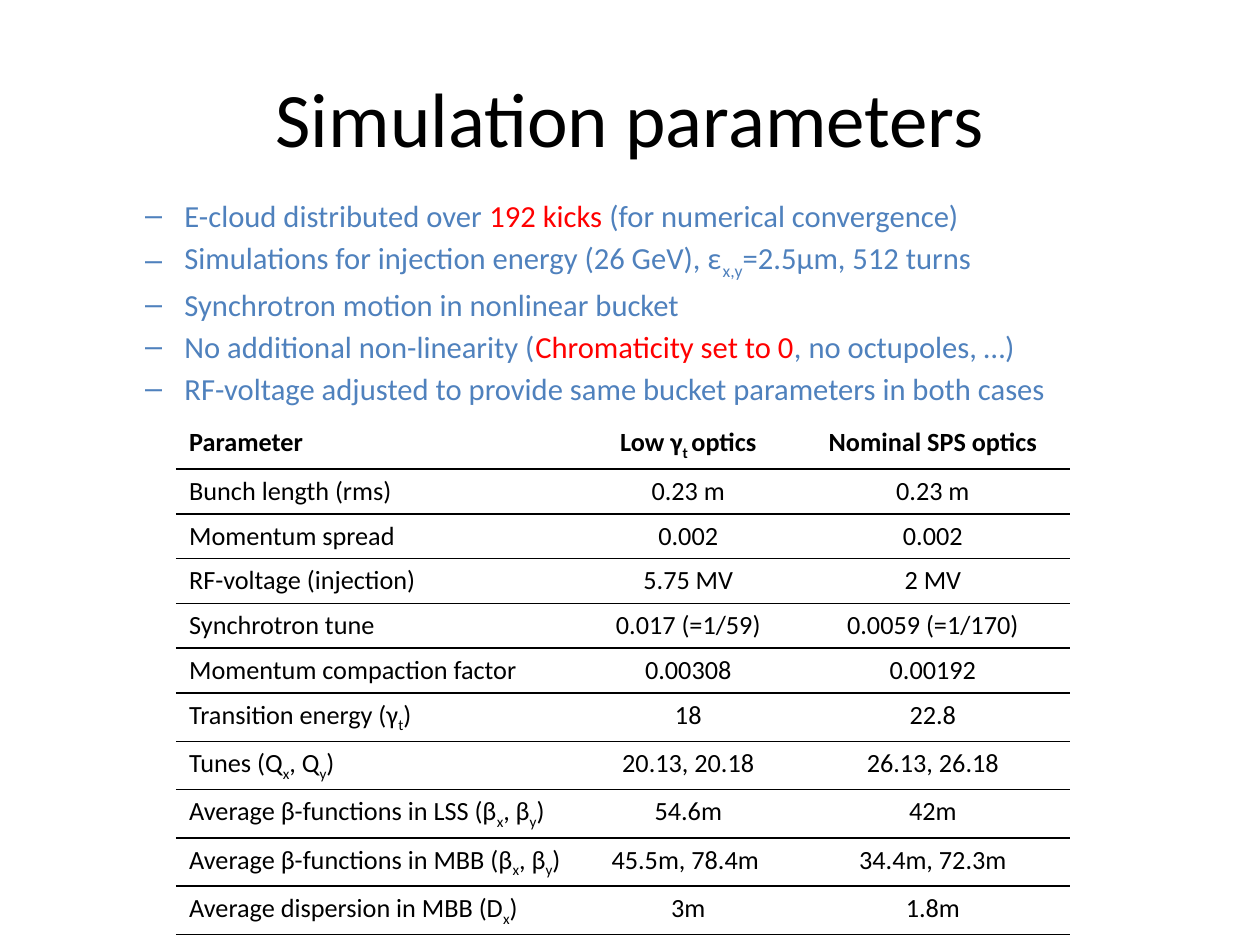
from lxml import etree
from pptx import Presentation
from pptx import util as u
from pptx.dml.color import RGBColor
from pptx.enum import text
from pptx.oxml.ns import qn

COLORS = {"ink": "000000", "paper": "FFFFFF", "blue": "4F81BD", "red": "FF0000"}
FONT = "Calibri"

# Pieces between bars are emphasised: red in RED_POINTS, subscript elsewhere.
POINTS = [
    "E-cloud distributed over |192 kicks |(for numerical convergence)",
    "Simulations for injection energy (26 GeV), ε|x,y|=2.5μm, 512 turns",
    "Synchrotron motion in nonlinear bucket",
    "No additional non-linearity (|Chromaticity set to 0|, no octupoles, …)",
    "RF-voltage adjusted to provide same bucket parameters in both cases",
]
RED_POINTS = {0, 3}

PARAMETERS = [
    ("Parameter", "Low γ|t |optics", "Nominal SPS optics"),
    ("Bunch length (rms)", "0.23 m", "0.23 m"),
    ("Momentum spread", "0.002", "0.002"),
    ("RF-voltage (injection)", "5.75 MV", "2 MV"),
    ("Synchrotron tune", "0.017 (=1/59)", "0.0059 (=1/170)"),
    ("Momentum compaction factor", "0.00308", "0.00192"),
    ("Transition energy (γ|t|)", "18", "22.8"),
    ("Tunes (Q|x|, Q|y|)", "20.13, 20.18", "26.13, 26.18"),
    ("Average β-functions in LSS (β|x|, β|y|)", "54.6m", "42m"),
    ("Average β-functions in MBB (β|x|, β|y|)", "45.5m, 78.4m ", "34.4m, 72.3m"),
    ("Average dispersion in MBB (D|x|)", "3m", "1.8m"),
]


class SlideBuilder:
    """Holds the style and the slide being built."""

    def __init__(self, prs):
        self.slide = prs.slides.add_slide(prs.slide_layouts[1])

    def place(self, shape, left, top, width, height):
        shape.left, shape.top = u.Cm(left), u.Cm(top)
        shape.width, shape.height = u.Cm(width), u.Cm(height)

    def add_words(self, paragraph, marked, size, color, bold=False, accent=None):
        """Add marked text; emphasis is the accent colour, or else a subscript."""
        for i, piece in enumerate(marked.split("|")):
            emphasised = i % 2 == 1
            run = paragraph.add_run()
            run.text = piece
            run.font.name, run.font.size, run.font.bold = FONT, u.Pt(size), bold
            shade = accent if emphasised and accent else color
            run.font.color.rgb = RGBColor.from_string(COLORS[shade])
            if emphasised and not accent:
                run.font._element.set("baseline", "-25000")

    def title(self, words, box):
        heading = self.slide.shapes.title
        self.place(heading, *box)
        heading.text_frame.vertical_anchor = text.MSO_ANCHOR.MIDDLE
        line = heading.text_frame.paragraphs[0]
        line.alignment = text.PP_ALIGN.CENTER
        self.add_words(line, words, 44, "ink")

    def dashes(self, points, red_points, box):
        body = self.slide.placeholders[1]
        self.place(body, *box)
        frame = body.text_frame
        frame.auto_size = text.MSO_AUTO_SIZE.NONE
        for i, point in enumerate(points):
            line = frame.add_paragraph() if i else frame.paragraphs[0]
            line.level = 1
            line.space_before = u.Pt(3)
            self.add_words(line, point, 17.5, "blue",
                           accent="red" if i in red_points else None)

    def border(self, cell, side, color):
        line = etree.SubElement(cell._tc.get_or_add_tcPr(), qn(f"a:ln{side}"),
                                w=str(u.Pt(1)))
        fill = etree.SubElement(line, qn("a:solidFill"))
        etree.SubElement(fill, qn("a:srgbClr"), val=COLORS[color])

    def table(self, rows, left, top, widths, row_height):
        grid = self.slide.shapes.add_table(
            len(rows), len(widths), u.Cm(left), u.Cm(top),
            u.Cm(sum(widths)), u.Cm(row_height * len(rows))).table
        grid.first_row = grid.horz_banding = False
        for column, width in zip(grid.columns, widths):
            column.width = u.Cm(width)
        for r, row in enumerate(rows):
            for c, words in enumerate(row):
                cell = grid.cell(r, c)
                line = cell.text_frame.paragraphs[0]
                line.alignment = text.PP_ALIGN.CENTER if c else text.PP_ALIGN.LEFT
                self.add_words(line, words, 15, "ink", bold=r == 0)
                top_color = "ink" if r else "paper"
                for side, color in zip("LRTB", ("paper", "paper", top_color, "ink")):
                    self.border(cell, side, color)
                cell.fill.background()


def main():
    prs = Presentation()
    prs.slide_width, prs.slide_height = u.Cm(25.4), u.Cm(19.05)
    builder = SlideBuilder(prs)
    builder.title("Simulation parameters", (1.27, 0.76, 22.86, 3.18))
    builder.dashes(POINTS, RED_POINTS, (1.4, 3.84, 22.86, 4.17))
    builder.table(PARAMETERS, 3.56, 8.48, (8.13, 4.37, 5.49), 0.64)
    prs.save("out.pptx")


if __name__ == "__main__":
    main()
